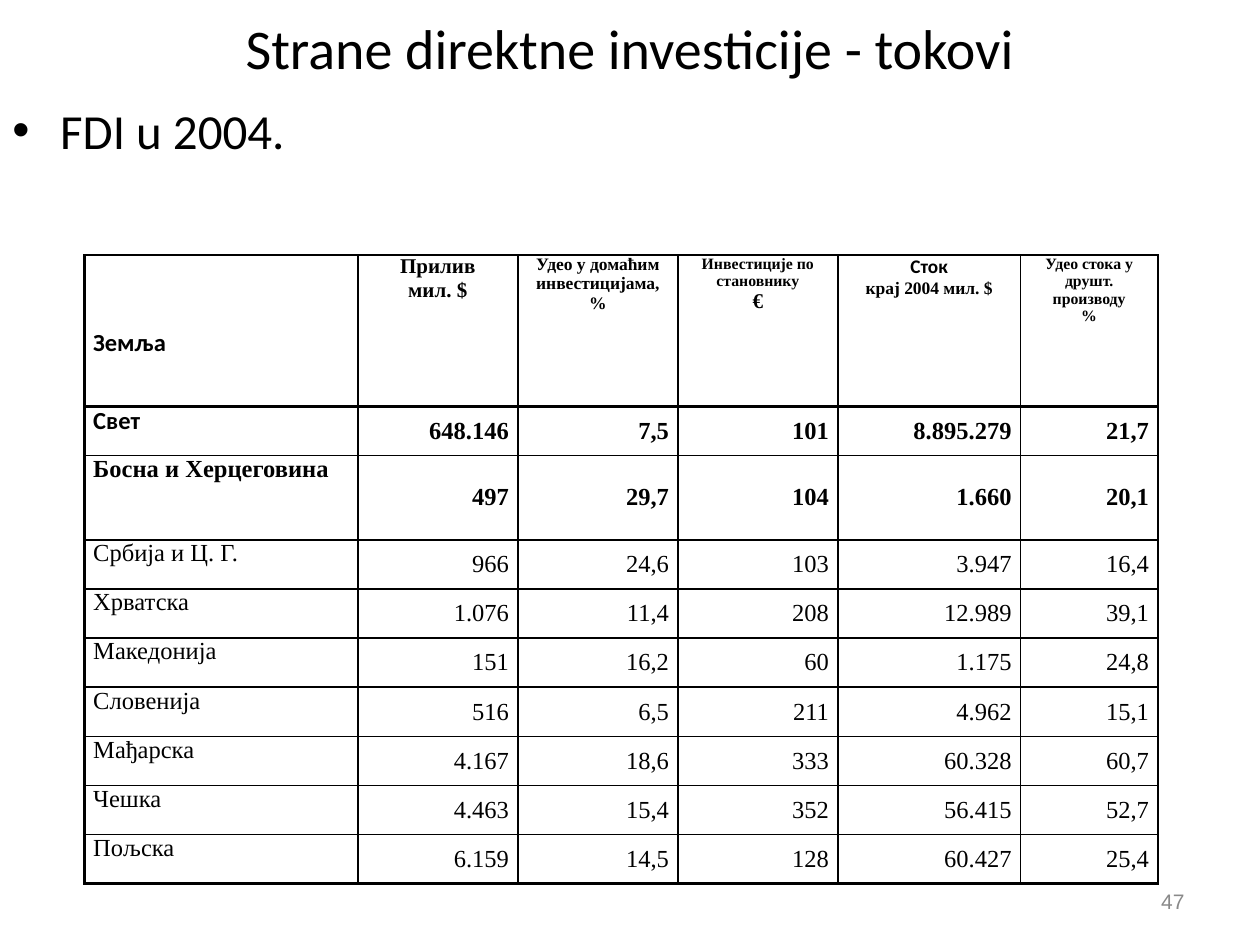
import dataclasses
import typing

import lxml.etree
import pptx
import pptx.dml.color
import pptx.enum.text
import pptx.oxml.ns
import pptx.util

Inches = pptx.util.Inches
Pt = pptx.util.Pt
Align = pptx.enum.text.PP_ALIGN
Anchor = pptx.enum.text.MSO_ANCHOR
qn = pptx.oxml.ns.qn

PAGE_WIDTH, PAGE_HEIGHT = 10, 7.5


@dataclasses.dataclass(frozen=True)
class Theme:
    ink: str = "000000"
    muted: str = "898989"
    sans: str = "Calibri"
    serif: str = "Times New Roman"
    number_font: str = "Arial"
    title: float = 32
    body: float = 28
    table: float = 14
    heading: float = 12
    subheading: float = 11
    detail: float = 10
    fine: float = 9
    thick: float = 1.5
    thin: float = 1


THEME = Theme()


@dataclasses.dataclass(frozen=True)
class Area:
    left: float
    top: float
    width: float
    height: float

    def lengths(self) -> tuple[int, ...]:
        return (
            Inches(self.left * PAGE_WIDTH),
            Inches(self.top * PAGE_HEIGHT),
            Inches(self.width * PAGE_WIDTH),
            Inches(self.height * PAGE_HEIGHT),
        )


@dataclasses.dataclass(frozen=True)
class Line:
    text: str
    size: float = THEME.table
    font: str = THEME.serif
    bold: bool = False
    color: str = THEME.ink


@dataclasses.dataclass(frozen=True)
class Country:
    name: Line
    values: str
    height: float = 0.39


COLUMN_WIDTHS = (2.17, 1.27, 1.27, 1.27, 1.45, 1.09)
HEADER_HEIGHT = 1.2
TABLE_AREA = Area(0.067, 0.27, 0.85, 0.664)


def heading(text: str, size: float, font: str = THEME.serif) -> Line:
    return Line(text, size, font, bold=True)


HEADERS = (
    (heading("Земља", THEME.table, THEME.sans),),
    (heading("Прилив", THEME.heading), heading("мил. $", THEME.heading)),
    (heading("Удео у домаћим инвестицијама,", THEME.detail), heading("%", THEME.detail)),
    (heading("Инвестиције по становнику", THEME.fine), heading("€", THEME.heading)),
    (heading("Сток", THEME.subheading, THEME.sans), heading("крај 2004 мил. $", THEME.detail)),
    (heading("Удео стока у друшт. производу", THEME.fine), heading("%", THEME.fine)),
)

COUNTRIES = (
    Country(Line("Свет", font=THEME.sans, bold=True), "648.146 7,5 101 8.895.279 21,7"),
    Country(Line("Босна и Херцеговина", bold=True), "497 29,7 104 1.660 20,1", 0.67),
    Country(Line("Србија и Ц. Г."), "966 24,6 103 3.947 16,4"),
    Country(Line("Хрватска"), "1.076 11,4 208 12.989 39,1"),
    Country(Line("Македонија"), "151 16,2 60 1.175 24,8"),
    Country(Line("Словенија"), "516 6,5 211 4.962 15,1"),
    Country(Line("Мађарска"), "4.167 18,6 333 60.328 60,7"),
    Country(Line("Чешка"), "4.463 15,4 352 56.415 52,7"),
    Country(Line("Пољска"), "6.159 14,5 128 60.427 25,4"),
)


def apply(target: typing.Any, values: dict[str, typing.Any]) -> None:
    for name, value in values.items():
        setattr(target, name, value)


def write(frame: typing.Any, lines: typing.Sequence[Line], align: Align) -> None:
    for index, line in enumerate(lines):
        para = frame.add_paragraph() if index else frame.paragraphs[0]
        para.alignment = align
        span = para.add_run()
        span.text = line.text
        apply(span.font, {"size": Pt(line.size), "name": line.font, "bold": line.bold})
        span.font.color.rgb = pptx.dml.color.RGBColor.from_string(line.color)


def add_text(page: typing.Any, area: Area, line: Line, align: Align, anchor: Anchor) -> typing.Any:
    frame = page.shapes.add_textbox(*area.lengths()).text_frame
    apply(frame, {"word_wrap": True, "vertical_anchor": anchor})
    write(frame, [line], align)
    return frame.paragraphs[0]


def add_bullet(para: typing.Any) -> None:
    para.space_before = Pt(THEME.body * 0.2)
    properties = para._p.get_or_add_pPr()
    properties.set("marL", str(Inches(0.38)))
    properties.set("indent", str(-Inches(0.38)))
    lxml.etree.SubElement(properties, qn("a:buFont")).set("typeface", "Arial")
    lxml.etree.SubElement(properties, qn("a:buChar")).set("char", "•")


def column_rule(row: int, edge: int) -> float:
    if edge == 1:
        return THEME.thin if row == len(COUNTRIES) else THEME.thick
    return THEME.thick if edge in (0, 4, len(COLUMN_WIDTHS)) else THEME.thin


def row_rule(edge: int) -> float:
    return THEME.thick if edge in (0, 1, len(COUNTRIES) + 1) else THEME.thin


def add_borders(cell: typing.Any, row: int, column: int) -> None:
    properties = cell._tc.get_or_add_tcPr()
    widths = {
        "a:lnL": column_rule(row, column),
        "a:lnR": column_rule(row, column + 1),
        "a:lnT": row_rule(row),
        "a:lnB": row_rule(row + 1),
    }
    for tag, width in widths.items():
        border = lxml.etree.SubElement(properties, qn(tag))
        border.set("w", str(Pt(width)))
        fill = lxml.etree.SubElement(border, qn("a:solidFill"))
        lxml.etree.SubElement(fill, qn("a:srgbClr")).set("val", THEME.ink)


def fill_cell(table: typing.Any, row: int, column: int, lines: typing.Sequence[Line]) -> None:
    cell = table.cell(row, column)
    is_corner = row == 0 and column == 0
    is_value = row > 0 and column > 0
    apply(cell, {
        "margin_left": Inches(0.07),
        "margin_right": Inches(0.07),
        "margin_top": Inches(0.2 if is_corner else 0),
        "margin_bottom": 0,
        "vertical_anchor": Anchor.MIDDLE if is_corner or is_value else Anchor.TOP,
    })
    align = Align.LEFT if column == 0 else Align.RIGHT if is_value else Align.CENTER
    write(cell.text_frame, lines, align)
    add_borders(cell, row, column)
    cell.fill.background()


def add_investment_table(page: typing.Any) -> None:
    shape = page.shapes.add_table(len(COUNTRIES) + 1, len(COLUMN_WIDTHS), *TABLE_AREA.lengths())
    table = shape.table
    apply(table, {"first_row": False, "horz_banding": False})
    for column, width in zip(table.columns, COLUMN_WIDTHS):
        column.width = Inches(width)
    heights = [HEADER_HEIGHT] + [country.height for country in COUNTRIES]
    for row, height in zip(table.rows, heights):
        row.height = Inches(height)
    records = [HEADERS]
    for country in COUNTRIES:
        values = [(Line(value, bold=country.name.bold),) for value in country.values.split()]
        records.append([(country.name,), *values])
    for row, record in enumerate(records):
        for column, lines in enumerate(record):
            fill_cell(table, row, column, lines)


def main() -> None:
    deck = pptx.Presentation()
    apply(deck, {"slide_width": Inches(PAGE_WIDTH), "slide_height": Inches(PAGE_HEIGHT)})
    page = deck.slides.add_slide(deck.slide_layouts[6])
    title = Line("Strane direktne investicije - tokovi", THEME.title, THEME.sans)
    add_text(page, Area(0, 0, 1, 0.1), title, Align.CENTER, Anchor.MIDDLE)
    topic = Line("FDI u 2004.", THEME.body, THEME.sans)
    add_bullet(add_text(page, Area(0, 0.1, 1, 0.88), topic, Align.LEFT, Anchor.TOP))
    number = Line("47", THEME.heading, THEME.number_font, color=THEME.muted)
    add_text(page, Area(0.717, 0.927, 0.233, 0.053), number, Align.RIGHT, Anchor.MIDDLE)
    add_investment_table(page)
    deck.save("out.pptx")


if __name__ == "__main__":
    main()
